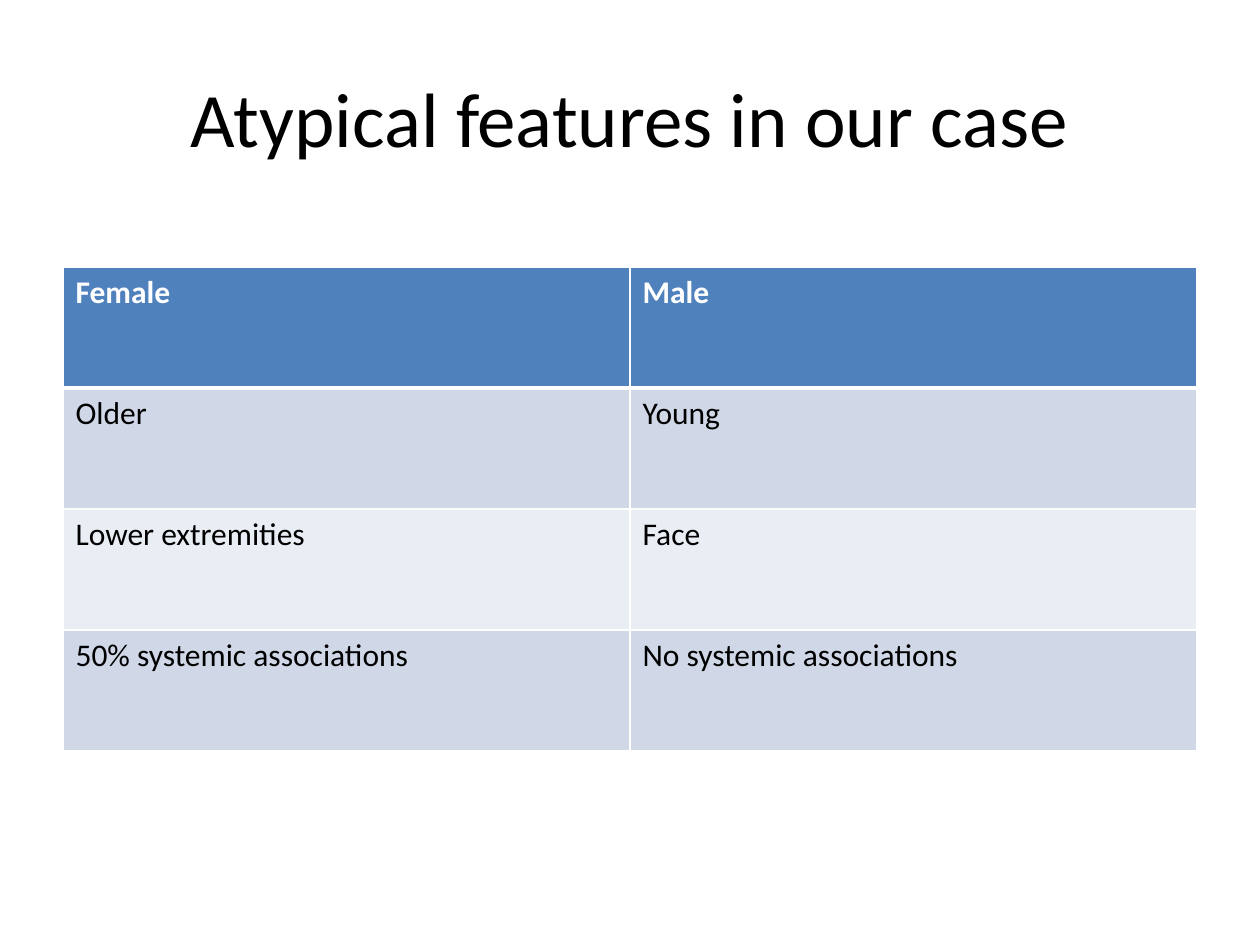
import pptx
import pptx.dml.color
import pptx.enum.text
import pptx.oxml
import pptx.oxml.ns
import pptx.util

WHITE = pptx.dml.color.RGBColor(0xFF, 0xFF, 0xFF)
BLACK = pptx.dml.color.RGBColor(0x00, 0x00, 0x00)
HEADER_BLUE = pptx.dml.color.RGBColor(0x4F, 0x81, 0xBD)
BAND_DARK = pptx.dml.color.RGBColor(0xD0, 0xD8, 0xE8)
BAND_LIGHT = pptx.dml.color.RGBColor(0xE9, 0xED, 0xF4)

FONT = "Calibri"
WIDTH, HEIGHT = pptx.util.Inches(10), pptx.util.Inches(7.5)
MARGIN = 0.05  # share of the slide's width
ROW_HEIGHT = pptx.util.Inches(0.96)

FEATURES = [
    ("Female", "Male"),
    ("Older", "Young"),
    ("Lower extremities", "Face"),
    ("50% systemic associations", "No systemic associations"),
]


def write_text(frame, text, *, size=18, color=BLACK, bold=False,
               align=pptx.enum.text.PP_ALIGN.LEFT):
    para = frame.paragraphs[0]
    para.alignment = align
    span = para.add_run()
    span.text = text
    span.font.name = FONT
    span.font.size = pptx.util.Pt(size)
    span.font.bold = bold
    span.font.color.rgb = color


def add_title(page, text):
    box = page.shapes.add_textbox(
        int(WIDTH * MARGIN), int(HEIGHT * 0.04),
        int(WIDTH * (1 - 2 * MARGIN)), pptx.util.Inches(1.25))
    frame = box.text_frame
    frame.word_wrap = True
    frame.vertical_anchor = pptx.enum.text.MSO_ANCHOR.MIDDLE
    write_text(frame, text, size=44, align=pptx.enum.text.PP_ALIGN.CENTER)


def set_borders(cell, color, **widths):
    """Draw the sides named L, R, T and B, in the order the schema asks for."""
    properties = cell._tc.get_or_add_tcPr()
    for position, side in enumerate("LRTB"):
        line = pptx.oxml.parse_xml(
            f'<a:ln{side} {pptx.oxml.ns.nsdecls("a")} w="{pptx.util.Pt(widths[side])}">'
            f'<a:solidFill><a:srgbClr val="{color}"/></a:solidFill></a:ln{side}>')
        properties.insert(position, line)


def add_feature_table(page, rows):
    column_count = len(rows[0])
    table_width = int(WIDTH * (1 - 2 * MARGIN))
    table = page.shapes.add_table(
        len(rows), column_count, int(WIDTH * MARGIN), pptx.util.Inches(2.12),
        table_width, ROW_HEIGHT * len(rows)).table
    for column in table.columns:
        column.width = table_width // column_count
    for row_index, texts in enumerate(rows):
        table.rows[row_index].height = ROW_HEIGHT
        header = row_index == 0
        band = BAND_DARK if row_index % 2 else BAND_LIGHT
        for column_index, text in enumerate(texts):
            cell = table.cell(row_index, column_index)
            cell.fill.solid()
            cell.fill.fore_color.rgb = HEADER_BLUE if header else band
            # The rule between header and body is thicker
            set_borders(cell, WHITE, L=1, R=1, T=3 if row_index == 1 else 1,
                        B=3 if header else 1)
            write_text(cell.text_frame, text, bold=header,
                       color=WHITE if header else BLACK)


def main():
    deck = pptx.Presentation()
    deck.slide_width, deck.slide_height = WIDTH, HEIGHT
    page = deck.slides.add_slide(deck.slide_layouts[6])
    add_title(page, "Atypical features in our case")
    add_feature_table(page, FEATURES)
    deck.save("out.pptx")


if __name__ == "__main__":
    main()
